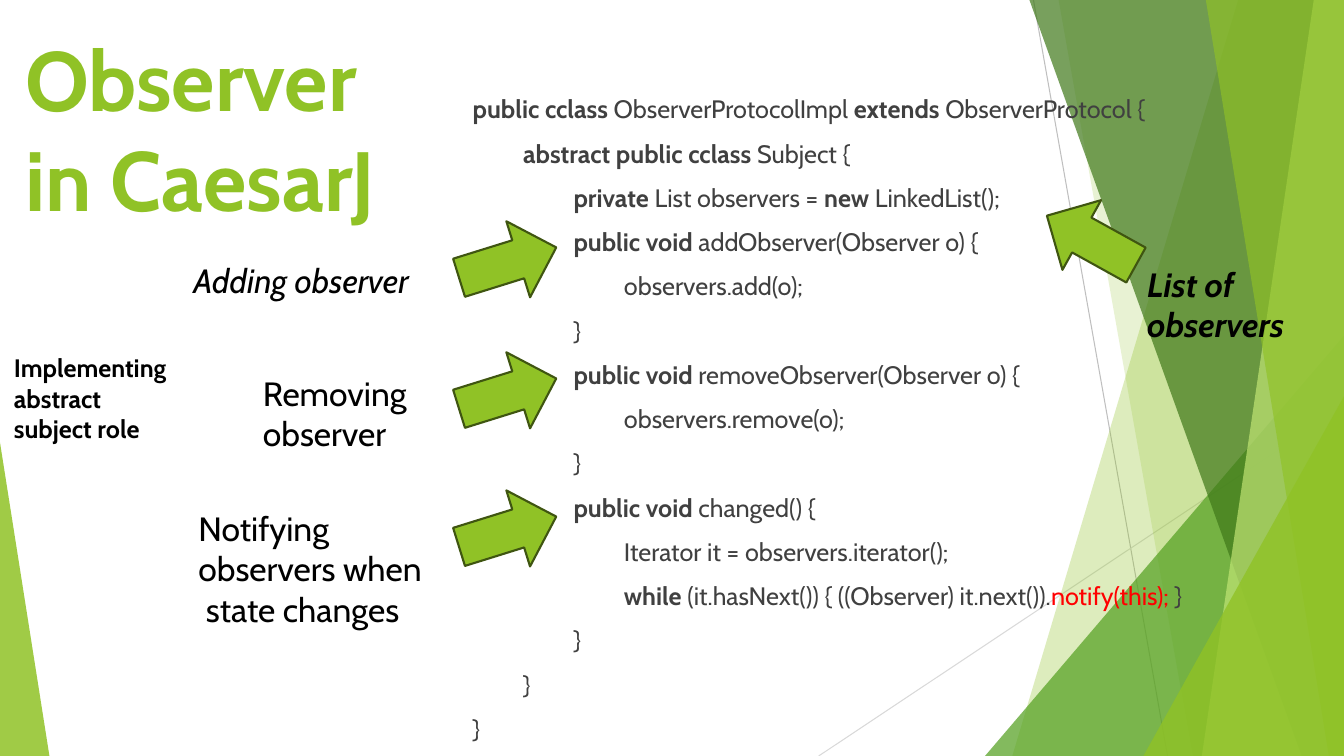
from dataclasses import dataclass

from lxml.etree import SubElement
from pptx import Presentation
from pptx.dml.color import RGBColor
from pptx.enum.shapes import MSO_CONNECTOR, MSO_SHAPE
from pptx.enum.text import MSO_AUTO_SIZE
from pptx.oxml.ns import qn
from pptx.util import Inches, Pt


@dataclass(frozen=True)
class Theme:
    font: str = "Cabin"
    green: str = "90C226"
    leaf: str = "54A021"
    forest: str = "3F7819"
    lime: str = "C0E474"
    outline: str = "3F5511"
    code: str = "404040"
    alert: str = "FF0000"
    label: str = "000000"
    dark_rule: str = "BFBFBF"
    light_rule: str = "D9D9D9"
    title_size: int = 60
    label_size: int = 24
    code_size: int = 18
    code_gap: int = 10
    indent: float = 0.5


@dataclass(frozen=True)
class Box:
    left: float
    top: float
    width: float
    height: float

    @property
    def right(self):
        return self.left + self.width

    @property
    def bottom(self):
        return self.top + self.height

    def inner(self, left, top, width, height):
        return Box(self.left + left, self.top + top, width, height)

    def lengths(self):
        return [Inches(value) for value in (self.left, self.top, self.width, self.height)]


THEME = Theme()
PAGE = Box(0, 0, 13.33, 7.5)

CODE = [
    (0, [("public cclass ", "bold"), ("ObserverProtocolImpl ", ""),
         ("extends ", "bold"), ("ObserverProtocol {", "")]),
    (1, [("abstract public cclass ", "bold"), ("Subject {", "")]),
    (2, [("private", "bold"), (" List observers = ", ""),
         ("new ", "bold"), ("LinkedList();", "")]),
    (2, [("public void ", "bold"), ("addObserver(Observer o) {", "")]),
    (3, [("observers.add(o);", "")]),
    (2, [("}", "")]),
    (2, [("public void ", "bold"), ("removeObserver(Observer o) {", "")]),
    (3, [("observers.remove(o);", "")]),
    (2, [("}", "")]),
    (2, [("public void ", "bold"), ("changed() {", "")]),
    (3, [("Iterator it = observers.iterator();", "")]),
    (3, [("while", "bold"), (" (it.hasNext()) { ((Observer) it.next()).", ""),
         ("notify(this); ", "alert"), ("}", "")]),
    (2, [("}", "")]),
    (1, [("}", "")]),
    (0, [("}", "")]),
]


def color(value):
    return RGBColor.from_string(value)


def paint(shape, fill, opacity=100):
    shape.shadow.inherit = False
    shape.fill.solid()
    shape.fill.fore_color.rgb = color(fill)
    shape.line.fill.background()
    if opacity < 100:
        tint = shape._element.spPr.find(qn("a:solidFill"))[0]
        SubElement(tint, qn("a:alpha")).set("val", str(opacity * 1000))


def add_rule(page, start, end, shade):
    points = [Inches(value) for value in (*start, *end)]
    rule = page.shapes.add_connector(MSO_CONNECTOR.STRAIGHT, *points)
    rule.line.color.rgb = color(shade)
    rule.line.width = Pt(0.75)
    SubElement(rule._element.spPr, qn("a:effectLst"))


def add_band(page, box, top_left, bottom_left, fill, opacity):
    corners = [(top_left, box.top), (box.right, box.top),
               (box.right, box.bottom), (bottom_left, box.bottom)]
    points = [(Inches(across), Inches(down)) for across, down in corners]
    builder = page.shapes.build_freeform(*points[0], scale=1.0)
    builder.add_line_segments(points[1:], close=True)
    paint(builder.convert_to_shape(), fill, opacity)


def add_corner(page, box, peak, fill, opacity):
    corner = page.shapes.add_shape(MSO_SHAPE.ISOSCELES_TRIANGLE, *box.lengths())
    corner.adjustments[0] = peak
    paint(corner, fill, opacity)


def add_backdrop(page, box):
    def right_corner(width, height, fill, opacity):
        area = Box(box.right - width, box.bottom - height, width, height)
        add_corner(page, area, 1, fill, opacity)

    add_rule(page, (10.25, box.top), (11.58, box.bottom), THEME.dark_rule)
    add_rule(page, (box.right, 4.03), (8.12, box.bottom), THEME.light_rule)
    add_band(page, box, 12.28, 10.04, THEME.green, 30)
    add_band(page, box, 10.5, 11.83, THEME.green, 20)
    right_corner(3.56, 4.17, THEME.leaf, 72)
    add_band(page, box, 10.21, 12.91, THEME.forest, 70)
    add_band(page, box, 13.03, 11.92, THEME.lime, 70)
    add_band(page, box, 11.96, 13.18, THEME.green, 65)
    right_corner(1.99, 3.57, THEME.green, 80)
    add_corner(page, Box(box.left, box.bottom - 3.11, 0.49, 3.11), 0, THEME.green, 85)


def add_span(para, text, size, shade, bold=False, italic=False):
    span = para.add_run()
    span.text = text
    span.font.name = THEME.font
    span.font.size = Pt(size)
    span.font.color.rgb = color(shade)
    span.font.bold = bold
    span.font.italic = italic


def add_frame(page, box, wrap=True, grow=False):
    frame = page.shapes.add_textbox(*box.lengths()).text_frame
    frame.word_wrap = wrap
    frame.auto_size = MSO_AUTO_SIZE.SHAPE_TO_FIT_TEXT if grow else MSO_AUTO_SIZE.NONE
    return frame


def next_para(frame, index):
    return frame.add_paragraph() if index else frame.paragraphs[0]


def add_title(page, box):
    para = add_frame(page, box).paragraphs[0]
    add_span(para, "Observer ", THEME.title_size, THEME.green, bold=True)
    para.add_line_break()
    add_span(para, "in CaesarJ", THEME.title_size, THEME.green, bold=True)


def add_code(page, box):
    frame = add_frame(page, box)
    for index, (level, spans) in enumerate(CODE):
        para = next_para(frame, index)
        para.space_before = Pt(THEME.code_gap)
        margin = Inches(level * THEME.indent)
        para._p.get_or_add_pPr().set("marL", str(margin))
        for text, style in spans:
            shade = THEME.alert if style == "alert" else THEME.code
            add_span(para, text, THEME.code_size, shade, bold=style == "bold")


def add_label(page, box, lines, size=THEME.label_size, wrap=False, bold=False, italic=False):
    frame = add_frame(page, box, wrap, grow=True)
    for index, line in enumerate(lines):
        add_span(next_para(frame, index), line, size, THEME.label, bold, italic)


def add_arrow(page, box, angle):
    arrow = page.shapes.add_shape(MSO_SHAPE.DOWN_ARROW, *box.lengths())
    arrow.rotation = angle
    paint(arrow, THEME.green)
    arrow.line.color.rgb = color(THEME.outline)
    arrow.line.width = Pt(1.5)


def add_notes_left(page, box):
    for top in (1.3, 2.67, 0):
        add_arrow(page, box.inner(4.6, top, 0.79, 1.01), 252.7)
    add_label(page, box.inner(0, 1.35, 1.83, 1.01), ["Implementing abstract", "subject role"],
              THEME.code_size, wrap=True, bold=True)
    add_label(page, box.inner(2.47, 1.55, 1.74, 0.91), ["Removing", "observer"])
    add_label(page, box.inner(1.78, 0.43, 2.65, 0.5), ["Adding observer"], italic=True)
    add_label(page, box.inner(1.83, 2.89, 2.54, 1.31),
              ["Notifying", "observers when", " state changes"])


def add_note_right(page, box):
    add_arrow(page, box.inner(0, 0, 0.79, 1.01), 119)
    add_label(page, box.inner(0.85, 0.69, 1.76, 0.91), ["List of", "observers"],
              bold=True, italic=True)


def main():
    deck = Presentation()
    deck.slide_width, deck.slide_height = Inches(PAGE.width), Inches(PAGE.height)
    page = deck.slides.add_slide(deck.slide_layouts[6])
    add_backdrop(page, PAGE)
    add_code(page, PAGE.inner(4.59, 0.88, 9.54, 7.49))
    add_title(page, PAGE.inner(0.15, 0.22, 8.89, 1.44))
    add_notes_left(page, PAGE.inner(0.04, 2.1, 5.39, 4.2))
    add_note_right(page, PAGE.inner(10.43, 1.88, 2.61, 1.6))
    deck.save("out.pptx")


if __name__ == "__main__":
    main()
